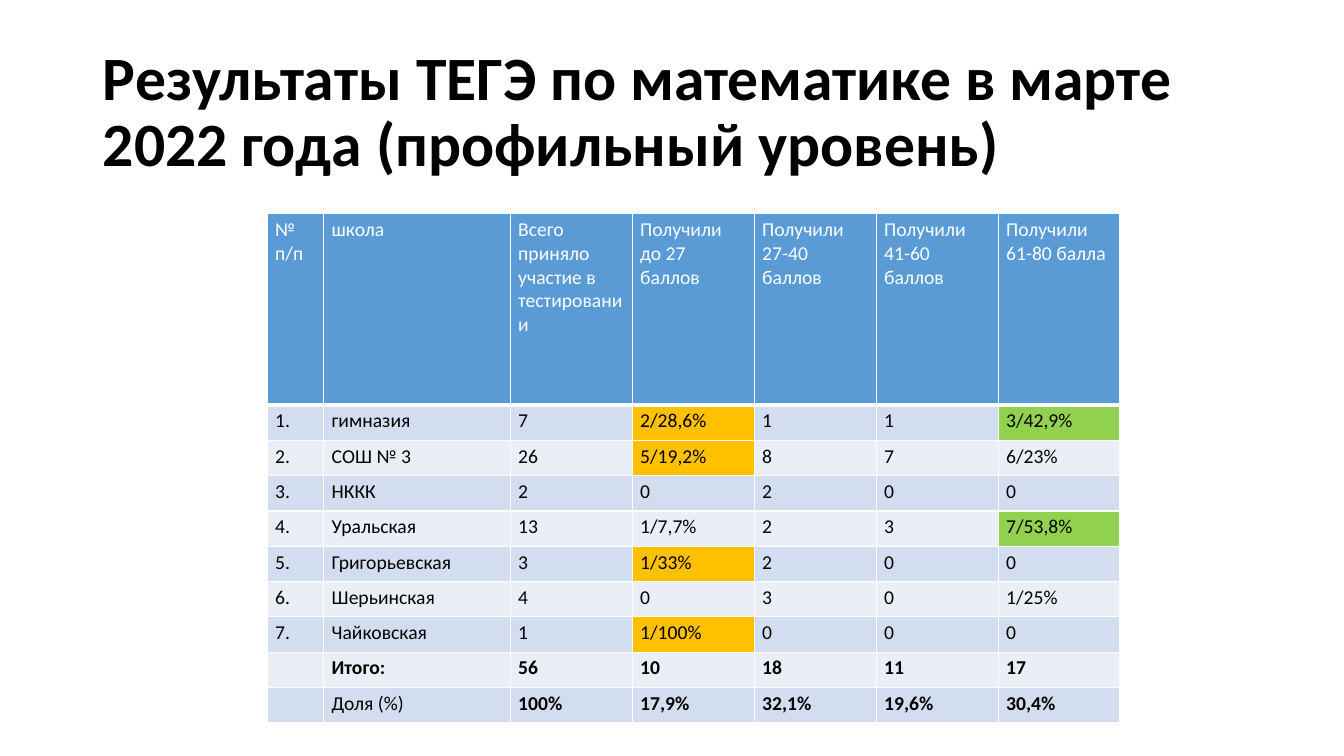
from dataclasses import dataclass

from lxml import etree
from pptx import Presentation
from pptx.dml.color import RGBColor
from pptx.enum.text import MSO_ANCHOR, MSO_AUTO_SIZE, PP_ALIGN
from pptx.oxml import parse_xml
from pptx.oxml.ns import nsdecls, qn
from pptx.util import Inches, Pt

MIDDLE = MSO_ANCHOR.MIDDLE
NO_AUTOFIT = MSO_AUTO_SIZE.NONE
LEFT = PP_ALIGN.LEFT
TITLE_ONLY = 5

TITLE = "Результаты ТЕГЭ по математике в марте 2022 года (профильный уровень)"
HEADER = ["№ п/п", "школа", "Всего приняло участие в тестировании",
          "Получили до 27 баллов", "Получили 27-40 баллов",
          "Получили 41-60 баллов", "Получили 61-80 балла"]
SCHOOLS = [
    ["гимназия", "7", "2/28,6%", "1", "1", "3/42,9%"],
    ["СОШ № 3", "26", "5/19,2%", "8", "7", "6/23%"],
    ["НККК", "2", "0", "2", "0", "0"],
    ["Уральская", "13", "1/7,7%", "2", "3", "7/53,8%"],
    ["Григорьевская", "3", "1/33%", "2", "0", "0"],
    ["Шерьинская", "4", "0", "3", "0", "1/25%"],
    ["Чайковская", "1", "1/100%", "0", "0", "0"],
]
TOTALS = ["", "Итого:", "56", "10", "18", "11", "17"]
SHARES = ["", "Доля (%)", "100%", "17,9%", "32,1%", "19,6%", "30,4%"]
LOW_SCORES = {"2/28,6%", "5/19,2%", "1/33%", "1/100%"}
HIGH_SCORES = {"3/42,9%", "7/53,8%"}


@dataclass(frozen=True)
class Theme:
    font: str = "Calibri"
    title_size: int = 44
    table_size: int = 14
    text: str = "000000"
    header_text: str = "FFFFFF"
    border: str = "FFFFFF"
    header: str = "5B9BD5"
    bands: tuple = ("EAEFF7", "D2DEEF")
    low: str = "FFC000"
    high: str = "92D050"


THEME = Theme()
COLUMN_WIDTHS = [0.56, 1.85] + [1.21] * 5
HEADER_HEIGHT, ROW_HEIGHT = 1.9, 0.35
CELL_MARGINS = {"margin_left": 0.08, "margin_top": 0.04,
                "margin_right": 0.08, "margin_bottom": 0.04}


def place(shape, left, top, width, height):
    box = {"left": left, "top": top, "width": width, "height": height}
    for name, value in box.items():
        setattr(shape, name, Inches(value))


def format_font(font, size, color, bold):
    values = {"name": THEME.font, "size": Pt(size), "bold": bold}
    for name, value in values.items():
        setattr(font, name, value)
    font.color.rgb = RGBColor.from_string(color)


def add_borders(cell, header):
    """Draw thin cell edges, with a thicker one below the header."""
    properties = cell._tc.get_or_add_tcPr()
    for index, side in enumerate("LRTB"):
        width = Pt(3 if header and side == "B" else 1)
        properties.insert(index, parse_xml(
            f'<a:ln{side} {nsdecls("a")} w="{width}"><a:solidFill>'
            f'<a:srgbClr val="{THEME.border}"/></a:solidFill></a:ln{side}>'))


def cell_fill(text, row):
    if row == 0:
        return THEME.header
    if text in LOW_SCORES:
        return THEME.low
    if text in HIGH_SCORES:
        return THEME.high
    return THEME.bands[row % 2]


def fill_cell(cell, text, row, bold):
    for name, value in CELL_MARGINS.items():
        setattr(cell, name, Inches(value))
    cell.fill.solid()
    cell.fill.fore_color.rgb = RGBColor.from_string(cell_fill(text, row))
    add_borders(cell, row == 0)
    paragraph = cell.text_frame.paragraphs[0]
    if text:
        run = paragraph.add_run()
        run.text = text
        color = THEME.text if row else THEME.header_text
        format_font(run.font, THEME.table_size, color, bold)
    else:
        etree.SubElement(paragraph._p, qn("a:endParaRPr"),
                         sz=str(THEME.table_size * 100))


def add_title(slide):
    title = slide.shapes.title
    place(title, 0.92, 0.4, 11.5, 1.45)
    frame = title.text_frame
    frame.text = TITLE
    frame_format = {"vertical_anchor": MIDDLE, "word_wrap": True,
                    "auto_size": NO_AUTOFIT}
    for name, value in frame_format.items():
        setattr(frame, name, value)
    paragraph = frame.paragraphs[0]
    paragraph.alignment = LEFT
    paragraph.line_spacing = 0.9
    format_font(paragraph.runs[0].font, THEME.title_size, THEME.text, True)


def add_results(slide):
    numbered = [[f"{number}.", *school]
                for number, school in enumerate(SCHOOLS, 1)]
    rows = [HEADER, *numbered, TOTALS, SHARES]
    heights = [HEADER_HEIGHT] + [ROW_HEIGHT] * (len(rows) - 1)
    table = slide.shapes.add_table(
        len(rows), len(HEADER), Inches(2.65), Inches(2.12),
        Inches(sum(COLUMN_WIDTHS)), Inches(sum(heights))).table
    for column, width in zip(table.columns, COLUMN_WIDTHS):
        column.width = Inches(width)
    for row_index, (values, height) in enumerate(zip(rows, heights)):
        table.rows[row_index].height = Inches(height)
        for column_index, text in enumerate(values):
            bold = values is TOTALS or (values is SHARES and column_index > 1)
            fill_cell(table.cell(row_index, column_index), text, row_index, bold)


def main():
    presentation = Presentation()
    presentation.slide_width = Inches(13.33)
    presentation.slide_height = Inches(7.5)
    slide = presentation.slides.add_slide(presentation.slide_layouts[TITLE_ONLY])
    add_title(slide)
    add_results(slide)
    presentation.save("out.pptx")


if __name__ == "__main__":
    main()
